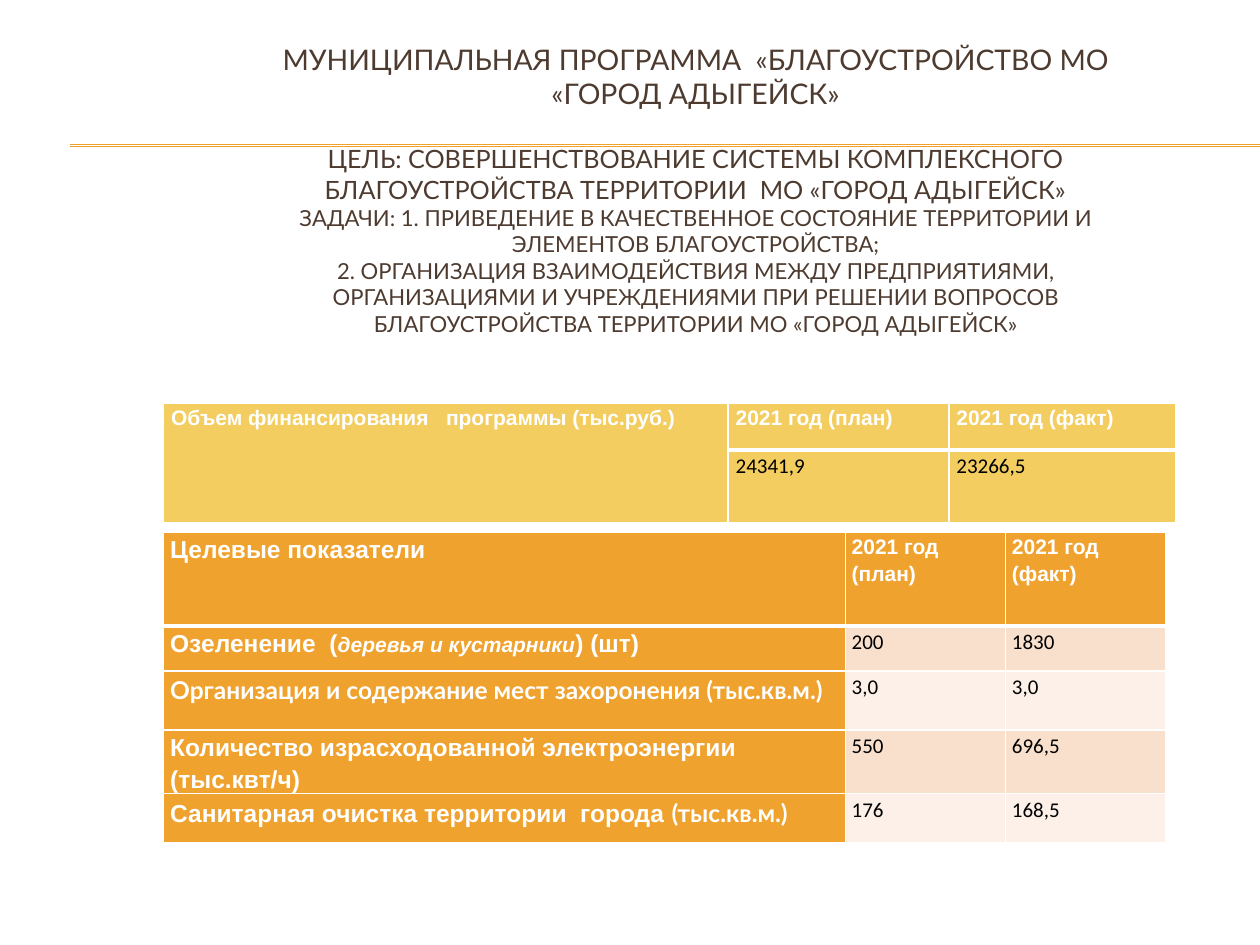
from dataclasses import dataclass

from lxml.etree import SubElement
from pptx import Presentation
from pptx.dml.color import RGBColor
from pptx.enum.shapes import MSO_CONNECTOR
from pptx.enum.text import MSO_ANCHOR, MSO_AUTO_SIZE, PP_ALIGN
from pptx.oxml.ns import qn
from pptx.util import Cm, Pt


@dataclass(frozen=True)
class Theme:
    brown: str = "4E3B30"
    orange: str = "F0A22E"
    yellow: str = "F3CD60"
    peach: str = "F9E0CD"
    cream: str = "FCF0E8"
    white: str = "FFFFFF"
    black: str = "000000"
    heading_font: str = "Lato"
    label_font: str = "Arial"
    value_font: str = "Calibri"
    programme_size: float = 16.2
    goal_size: float = 14.4
    task_size: float = 12.6
    label_size: float = 14
    value_size: float = 12
    thin: float = 1
    thick: float = 3


THEME = Theme()
LABEL = dict(font=THEME.label_font, size=THEME.label_size, color=THEME.white, bold=True)
HEADER = {**LABEL, "size": THEME.value_size}
VALUE = dict(font=THEME.value_font, size=THEME.value_size, color=THEME.black)


def write(paragraph, text, font, size, color, bold=False, italic=False,
          align=PP_ALIGN.LEFT, spacing=1.15, after=0):
    paragraph.alignment = align
    paragraph.line_spacing = spacing
    paragraph.space_before = Pt(0)
    paragraph.space_after = Pt(after)
    run = paragraph.add_run()
    run.text = text
    run.font.name = font
    run.font.size = Pt(size)
    run.font.bold = bold
    run.font.italic = italic
    run.font.color.rgb = RGBColor.from_string(color)


def next_paragraph(frame, index):
    return frame.add_paragraph() if index else frame.paragraphs[0]


def border(cell, bottom):
    properties = cell._tc.get_or_add_tcPr()
    for side in "LRTB":
        width = bottom if side == "B" else THEME.thin
        edge = SubElement(properties, qn(f"a:ln{side}"), w=str(Pt(width)))
        fill = SubElement(edge, qn("a:solidFill"))
        SubElement(fill, qn("a:srgbClr"), val=THEME.white)


def fill_cell(cell, paragraphs, fill, inset, bottom=THEME.thin):
    border(cell, bottom)
    cell.fill.solid()
    cell.fill.fore_color.rgb = RGBColor.from_string(fill)
    cell.margin_left = cell.margin_right = Cm(inset)
    cell.margin_top = cell.margin_bottom = 0
    for index, runs in enumerate(paragraphs):
        paragraph = next_paragraph(cell.text_frame, index)
        for text, style in runs:
            write(paragraph, text, **style)


def add_grid(slide, left, top, widths, heights):
    grid = slide.shapes.add_table(len(heights), len(widths), Cm(left), Cm(top),
                                  Cm(sum(widths)), Cm(sum(heights))).table
    for column, width in zip(grid.columns, widths):
        column.width = Cm(width)
    for row, height in zip(grid.rows, heights):
        row.height = Cm(height)
    return grid


def add_rule(slide, left, top, width):
    for offset in (0, 0.03):
        rule = slide.shapes.add_connector(MSO_CONNECTOR.STRAIGHT, Cm(left), Cm(top + offset),
                                          Cm(left + width), Cm(top + offset))
        rule.line.color.rgb = RGBColor.from_string(THEME.orange)
        rule.line.width = Pt(0.75)
        SubElement(rule._element.spPr, qn("a:effectLst"))


def place_title(slide, left, top, width, height):
    title = slide.shapes.title
    title.left, title.top, title.width, title.height = map(Cm, (left, top, width, height))
    frame = title.text_frame
    frame.word_wrap = True
    frame.auto_size = MSO_AUTO_SIZE.NONE
    frame.vertical_anchor = MSO_ANCHOR.TOP
    frame.margin_top = frame.margin_bottom = 0
    lines = [
        ("МУНИЦИПАЛЬНАЯ ПРОГРАММА  «БЛАГОУСТРОЙСТВО МО «ГОРОД АДЫГЕЙСК»",
         THEME.programme_size, 19.4),
        ("ЦЕЛЬ: СОВЕРШЕНСТВОВАНИЕ СИСТЕМЫ КОМПЛЕКСНОГО БЛАГОУСТРОЙСТВА "
         "ТЕРРИТОРИИ  МО «ГОРОД АДЫГЕЙСК»", THEME.goal_size, 0),
        ("ЗАДАЧИ: 1. ПРИВЕДЕНИЕ В КАЧЕСТВЕННОЕ СОСТОЯНИЕ ТЕРРИТОРИИ И "
         "ЭЛЕМЕНТОВ БЛАГОУСТРОЙСТВА;", THEME.task_size, 0),
        ("2. ОРГАНИЗАЦИЯ ВЗАИМОДЕЙСТВИЯ МЕЖДУ ПРЕДПРИЯТИЯМИ, ОРГАНИЗАЦИЯМИ И "
         "УЧРЕЖДЕНИЯМИ ПРИ РЕШЕНИИ ВОПРОСОВ БЛАГОУСТРОЙСТВА ТЕРРИТОРИИ МО "
         "«ГОРОД АДЫГЕЙСК»", THEME.task_size, 0),
    ]
    for index, (text, size, after) in enumerate(lines):
        write(next_paragraph(frame, index), text, font=THEME.heading_font, size=size,
              color=THEME.brown, align=PP_ALIGN.CENTER, spacing=1.0, after=after)


def add_funding(slide, left, top):
    grid = add_grid(slide, left, top, (11.38, 4.45, 4.57), (0.94, 1.47))
    grid.cell(0, 0).merge(grid.cell(1, 0))
    inset = 0.15
    fill_cell(grid.cell(0, 0), [[("Объем финансирования   программы (тыс.руб.)", HEADER)]],
              THEME.yellow, inset)
    funding = [("2021 год (план)", "24341,9"), ("2021 год (факт)", "23266,5")]
    for column, (year, amount) in enumerate(funding, 1):
        fill_cell(grid.cell(0, column), [[(year, HEADER)]], THEME.yellow, inset, THEME.thick)
        fill_cell(grid.cell(1, column), [[(amount, VALUE)]], THEME.yellow, inset)


def add_indicators(slide, left, top):
    grid = add_grid(slide, left, top, (13.74, 3.23, 3.23), (1.9, 0.91, 1.19, 1.19, 0.99))
    inset = 0.13
    lato_label = {**LABEL, "font": THEME.heading_font}
    headings = [
        [[("Целевые показатели", LABEL)]],
        [[("2021 год", HEADER)], [("(план)", HEADER)]],
        [[("2021 год", HEADER)], [("(факт)", HEADER)]],
    ]
    for column, heading in enumerate(headings):
        fill_cell(grid.cell(0, column), heading, THEME.orange, inset, THEME.thick)

    indicators = [
        ([("Озеленение  (", LABEL), ("деревья и кустарники", {**HEADER, "italic": True}),
          (") (шт)", LABEL)], "200", "1830"),
        ([("Организация и содержание мест захоронения (тыс.кв.м.)", lato_label)], "3,0", "3,0"),
        ([("Количество израсходованной электроэнергии (тыс.квт/ч)", LABEL)], "550", "696,5"),
        ([("Санитарная очистка территории  города ", LABEL), ("(тыс.кв.м.)", lato_label)],
         "176", "168,5"),
    ]
    for row, (indicator, *values) in enumerate(indicators, 1):
        fill_cell(grid.cell(row, 0), [indicator], THEME.orange, inset)
        band = THEME.peach if row % 2 else THEME.cream
        for column, value in enumerate(values, 1):
            fill_cell(grid.cell(row, column), [[(value, VALUE)]], band, inset)


def main():
    deck = Presentation()
    deck.slide_width, deck.slide_height = Cm(25.4), Cm(19.05)
    slide = deck.slides.add_slide(deck.slide_layouts[5])
    add_rule(slide, 1.42, 2.92, 23.98)
    place_title(slide, 4.98, 0.84, 18.08, 5.97)
    add_funding(slide, 3.3, 8.13)
    add_indicators(slide, 3.3, 10.72)
    deck.save("out.pptx")


if __name__ == "__main__":
    main()
